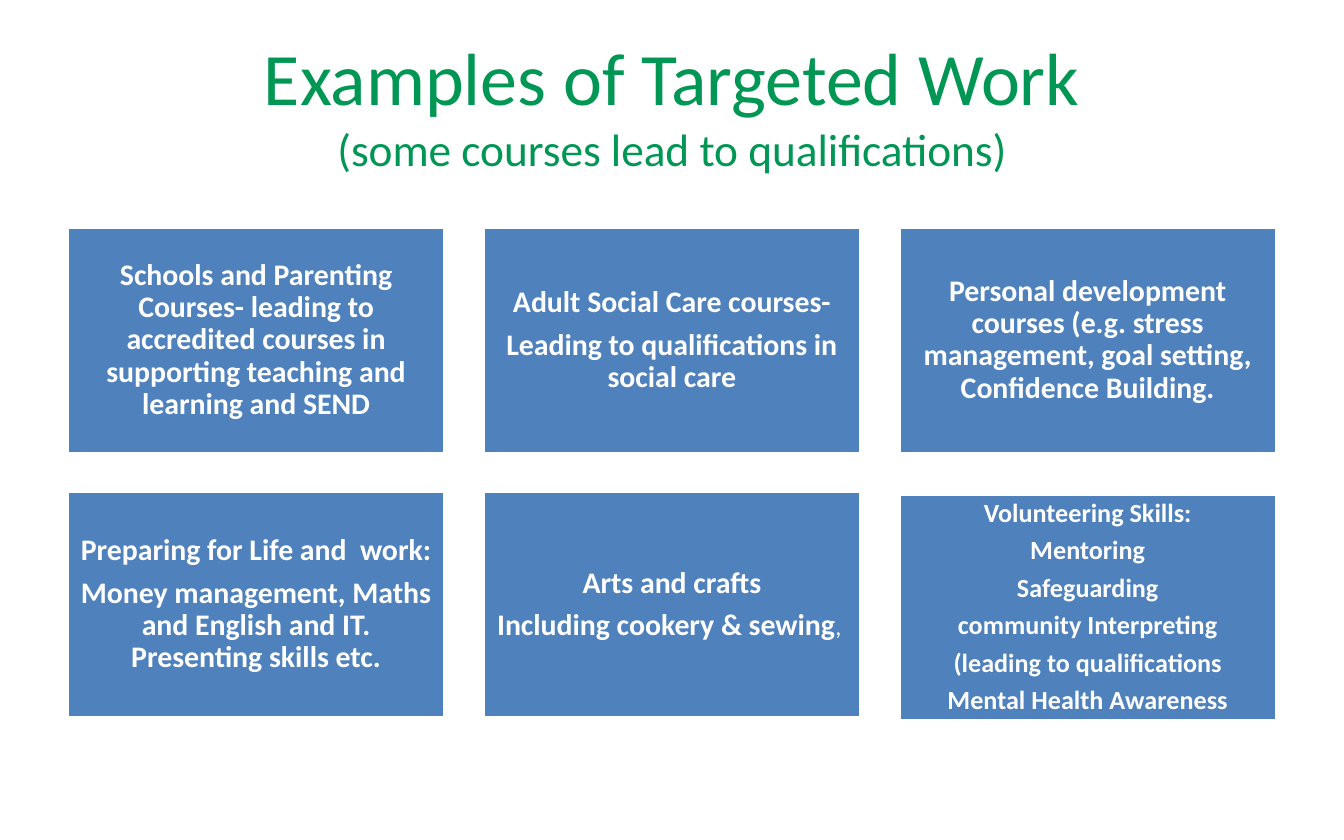
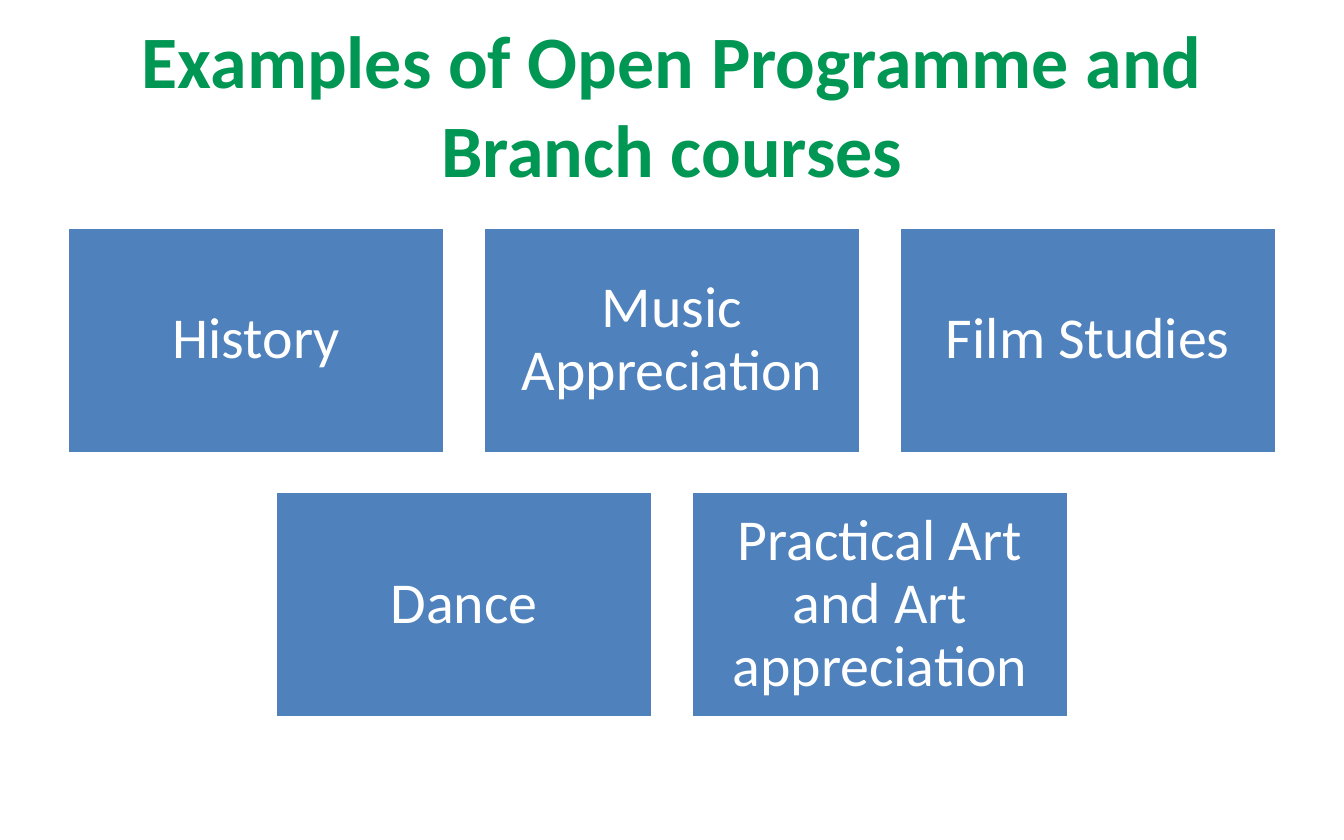
from pptx import Presentation
from pptx.dml.color import RGBColor
from pptx.enum.shapes import MSO_SHAPE
from pptx.enum.text import MSO_ANCHOR, PP_ALIGN
from pptx.util import Inches, Pt

RECT = MSO_SHAPE.RECTANGLE
MIDDLE = MSO_ANCHOR.MIDDLE
CENTER = PP_ALIGN.CENTER

GREEN, BLUE, WHITE = "009654", "4F81BD", "FFFFFF"
SLIDE_W, SLIDE_H = 10, 6.25
MARGIN = SLIDE_W * 0.05
CONTENT_W = SLIDE_W - 2 * MARGIN
TILE_W = CONTENT_W / 3.2
TILE_H = TILE_W * 0.6
GAP = TILE_W * 0.1
GRID_TOP = SLIDE_H * 0.27
TITLE_SIZE = 39.6


def rgb(value):
    return RGBColor.from_string(value)


def write(sp, paragraphs, size, color, bold=False, inset=0.1, line=1, after=0):
    tf = sp.text_frame
    tf.word_wrap = True
    tf.vertical_anchor = MIDDLE
    tf.margin_left = tf.margin_right = Inches(inset)
    tf.margin_top = tf.margin_bottom = Inches(min(inset, 0.13))
    for i, runs in enumerate(paragraphs):
        p = tf.paragraphs[0] if i == 0 else tf.add_paragraph()
        p.alignment = CENTER
        p.line_spacing = line
        p.space_after = Pt(size * after)
        for run in [runs] if isinstance(runs, str) else runs:
            text, run_size, run_bold = (run, size, bold) if isinstance(run, str) else run
            if text == "\n":
                p.add_line_break()
                continue
            r = p.add_run()
            r.text = text
            r.font.name = "Calibri"
            r.font.size = Pt(run_size)
            r.font.bold = run_bold
            r.font.color.rgb = rgb(color)


targeted = [
    [
        (["Schools and Parenting Courses- leading to accredited courses in "
          "supporting teaching and learning and SEND"], 16, 0.07, 0),
        (["Adult Social Care courses-",
          "Leading to qualifications in social care"], 16, 0.07, 0),
        (["Personal development courses (e.g. stress management, goal setting, "
          "Confidence Building."], 16, 0.07, 0),
    ],
    [
        (["Preparing for Life and  work:",
          "Money management, Maths and English and IT. Presenting skills etc."],
         16, 0.06, 0),
        (["Arts and crafts",
          ["Including cookery & sewing", (", ", 13, False)]], 16, 0.07, 0),
        (["Volunteering Skills:", "Mentoring", "Safeguarding",
          "community Interpreting", "(leading to qualifications",
          "Mental Health Awareness"], 14, 0.06, 0.02),
    ],
]
open_courses = [
    [([name], 31, 0.13, 0) for name in row]
    for row in (["History", "Music Appreciation", "Film Studies"],
                ["Dance", "Practical Art and Art appreciation"])
]
slides = [
    (["Examples of Targeted Work", "\n",
      ("(some courses lead to qualifications)", 24.3, False)],
     False, targeted, True),
    ("Examples of Open Programme and Branch courses", True, open_courses, False),
]

prs = Presentation()
prs.slide_width, prs.slide_height = Inches(SLIDE_W), Inches(SLIDE_H)

for title, title_bold, rows, tile_bold in slides:
    s = prs.slides.add_slide(prs.slide_layouts[6])
    sp = s.shapes.add_textbox(Inches(MARGIN), Inches(SLIDE_H * 0.04),
                              Inches(CONTENT_W), Inches(SLIDE_H / 6))
    write(sp, [title], TITLE_SIZE, GREEN, bold=title_bold)

    for row, tiles in enumerate(rows):
        row_w = len(tiles) * (TILE_W + GAP) - GAP
        left = (SLIDE_W - row_w) / 2
        top = GRID_TOP + row * (TILE_H + GAP)
        for col, (paragraphs, size, inset, drop) in enumerate(tiles):
            sp = s.shapes.add_shape(RECT, Inches(left + col * (TILE_W + GAP)),
                                    Inches(top + drop),
                                    Inches(TILE_W), Inches(TILE_H))
            sp.shadow.inherit = False
            sp.fill.solid()
            sp.fill.fore_color.rgb = rgb(BLUE)
            sp.line.color.rgb = rgb(WHITE)
            sp.line.width = Pt(2)
            write(sp, paragraphs, size, WHITE, bold=tile_bold,
                  inset=inset, line=0.9, after=0.35)

prs.save("out.pptx")
